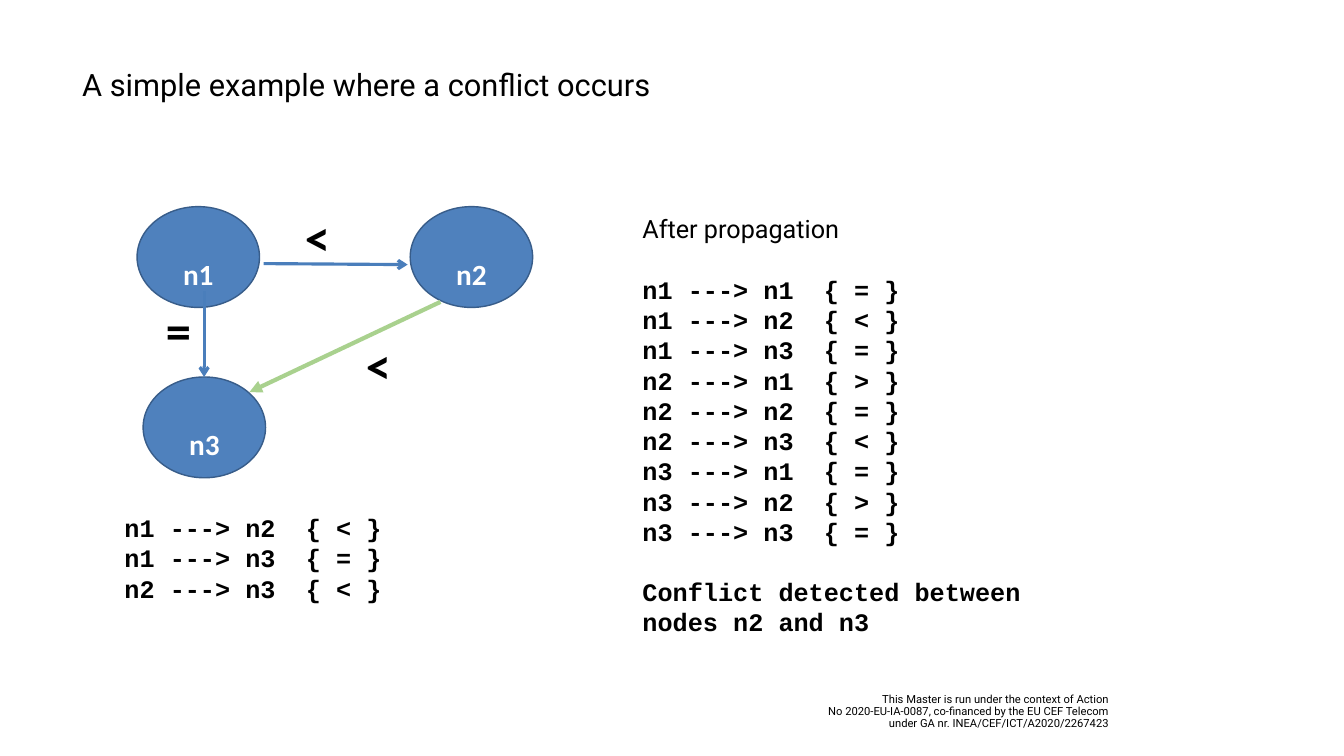
from lxml.etree import SubElement
from pptx import Presentation
from pptx.dml.color import RGBColor
from pptx.enum.shapes import MSO_CONNECTOR, MSO_SHAPE
from pptx.enum.text import MSO_ANCHOR, PP_ALIGN
from pptx.oxml.ns import qn
from pptx.util import Inches, Pt

BLACK = RGBColor(0x00, 0x00, 0x00)
WHITE = RGBColor(0xFF, 0xFF, 0xFF)
NODE_FILL = RGBColor(0x4F, 0x81, 0xBD)
NODE_EDGE = RGBColor(0x38, 0x5D, 0x8A)
BLUE = RGBColor(0x4A, 0x7E, 0xBB)
GREEN = RGBColor(0xA9, 0xD1, 0x8E)

NODES = [("n1", 2.72, 4.1), ("n2", 8.14, 4.1), ("n3", 2.84, 7.48)]
ARROWS = [
    ((5.23, 5.23), (8.09, 5.25), BLUE, 4.5, "arrow"),
    ((4.05, 5.78), (4.05, 7.48), BLUE, 4.5, "arrow"),
    ((8.74, 5.99), (4.95, 7.78), GREEN, 6, "triangle"),
]
RELATIONS = [("<", 6.6, 6.48), ("<", 5.39, 3.95), ("=", 2.63, 5.8)]
GIVEN = [("n1", "n2", "<"), ("n1", "n3", "="), ("n2", "n3", "<")]
PROPAGATED = [
    ("n1", "n1", "="), ("n1", "n2", "<"), ("n1", "n3", "="),
    ("n2", "n1", ">"), ("n2", "n2", "="), ("n2", "n3", "<"),
    ("n3", "n1", "="), ("n3", "n2", ">"), ("n3", "n3", "="),
]
FOOTER = (
    "This Master is run under the context of Action\n"
    "No 2020-EU-IA-0087, co-financed by the EU CEF Telecom\n"
    "under GA nr. INEA/CEF/ICT/A2020/2267423"
)
LINE_HEIGHT = Pt(43.2)


def write(para, text, size, font, color=BLACK, bold=False):
    para.text = text
    for span in para.runs:
        span.font.size = Pt(size)
        span.font.name = font
        span.font.color.rgb = color
        span.font.bold = bold


def add_box(page, left, top, width, height, anchor=MSO_ANCHOR.TOP):
    box = page.shapes.add_textbox(
        Inches(left), Inches(top), Inches(width), Inches(height))
    box.text_frame.word_wrap = True
    box.text_frame.vertical_anchor = anchor
    return box


def add_title(page, text):
    title = page.shapes.title
    title.left, title.top = Inches(1.53), Inches(1.26)
    title.width, title.height = Inches(12.23), Inches(0.84)
    title.fill.solid()
    title.fill.fore_color.rgb = WHITE
    title.text_frame.vertical_anchor = MSO_ANCHOR.TOP
    para = title.text_frame.paragraphs[0]
    write(para, text, 44, "Roboto")
    para.alignment = PP_ALIGN.LEFT


def add_node(page, name, left, top):
    node = page.shapes.add_shape(
        MSO_SHAPE.OVAL, Inches(left), Inches(top), Inches(2.43), Inches(2))
    node.shadow.inherit = False
    node.fill.solid()
    node.fill.fore_color.rgb = NODE_FILL
    node.line.color.rgb = NODE_EDGE
    node.line.width = Pt(2)
    node.text_frame.vertical_anchor = MSO_ANCHOR.MIDDLE
    para = node.text_frame.paragraphs[0]
    write(para, name, 72, "Calibri", WHITE, True)
    para.alignment = PP_ALIGN.CENTER
    # Node names are set as subscripts
    para.runs[0]._r.get_or_add_rPr().set("baseline", "-25000")


def add_arrow(page, start, end, color, width, head):
    arrow = page.shapes.add_connector(
        MSO_CONNECTOR.STRAIGHT, *[Inches(value) for value in start + end])
    arrow.line.color.rgb = color
    arrow.line.width = Pt(width)
    SubElement(arrow.line._get_or_add_ln(), qn("a:tailEnd"), type=head)
    SubElement(arrow._element.spPr, qn("a:effectLst"))


def add_relation(page, sign, left, top):
    box = add_box(page, left, top, 1.82, 1.3, MSO_ANCHOR.MIDDLE)
    para = box.text_frame.paragraphs[0]
    write(para, sign, 72, "Calibri", bold=True)
    para.alignment = PP_ALIGN.CENTER
    para.line_spacing = 1.15
    para.space_after = Pt(20)


def add_line(frame, text, font="Courier New", bold=True, gap=False):
    para = frame.paragraphs[0]
    if para.runs:
        para = frame.add_paragraph()
    write(para, text, 36, font, bold=bold)
    para.line_spacing = LINE_HEIGHT
    if gap:
        para.space_before = LINE_HEIGHT


def add_constraints(frame, constraints, gap=False):
    for index, (source, target, sign) in enumerate(constraints):
        add_line(frame, f"{source} ---> {target}  {{ {sign} }}",
                 gap=gap and index == 0)


def add_result(page):
    box = add_box(page, 12.65, 4.19, 8.25, 8.58)
    box.fill.solid()
    box.fill.fore_color.rgb = WHITE
    add_line(box.text_frame, "After propagation", "Roboto", False)
    add_constraints(box.text_frame, PROPAGATED, gap=True)
    add_line(box.text_frame, "Conflict detected between nodes n2 and n3", gap=True)


def add_footer(page):
    box = add_box(page, 15.02, 13.74, 7.08, 0.76, MSO_ANCHOR.MIDDLE)
    para = box.text_frame.paragraphs[0]
    write(para, FOOTER, 16, "Roboto")
    para.alignment = PP_ALIGN.RIGHT
    para.line_spacing = 0.9


def main():
    deck = Presentation()
    deck.slide_width, deck.slide_height = Inches(26.67), Inches(15)
    page = deck.slides.add_slide(deck.slide_layouts[5])

    add_title(page, "A simple example where a conflict occurs")
    add_footer(page)

    # Constraint graph
    for node in NODES:
        add_node(page, *node)
    for arrow in ARROWS:
        add_arrow(page, *arrow)
    for relation in RELATIONS:
        add_relation(page, *relation)

    # Given constraints and the outcome of propagation
    given = add_box(page, 2.37, 10.12, 5.55, 1.92)
    add_constraints(given.text_frame, GIVEN)
    add_result(page)

    deck.save("out.pptx")


if __name__ == "__main__":
    main()
